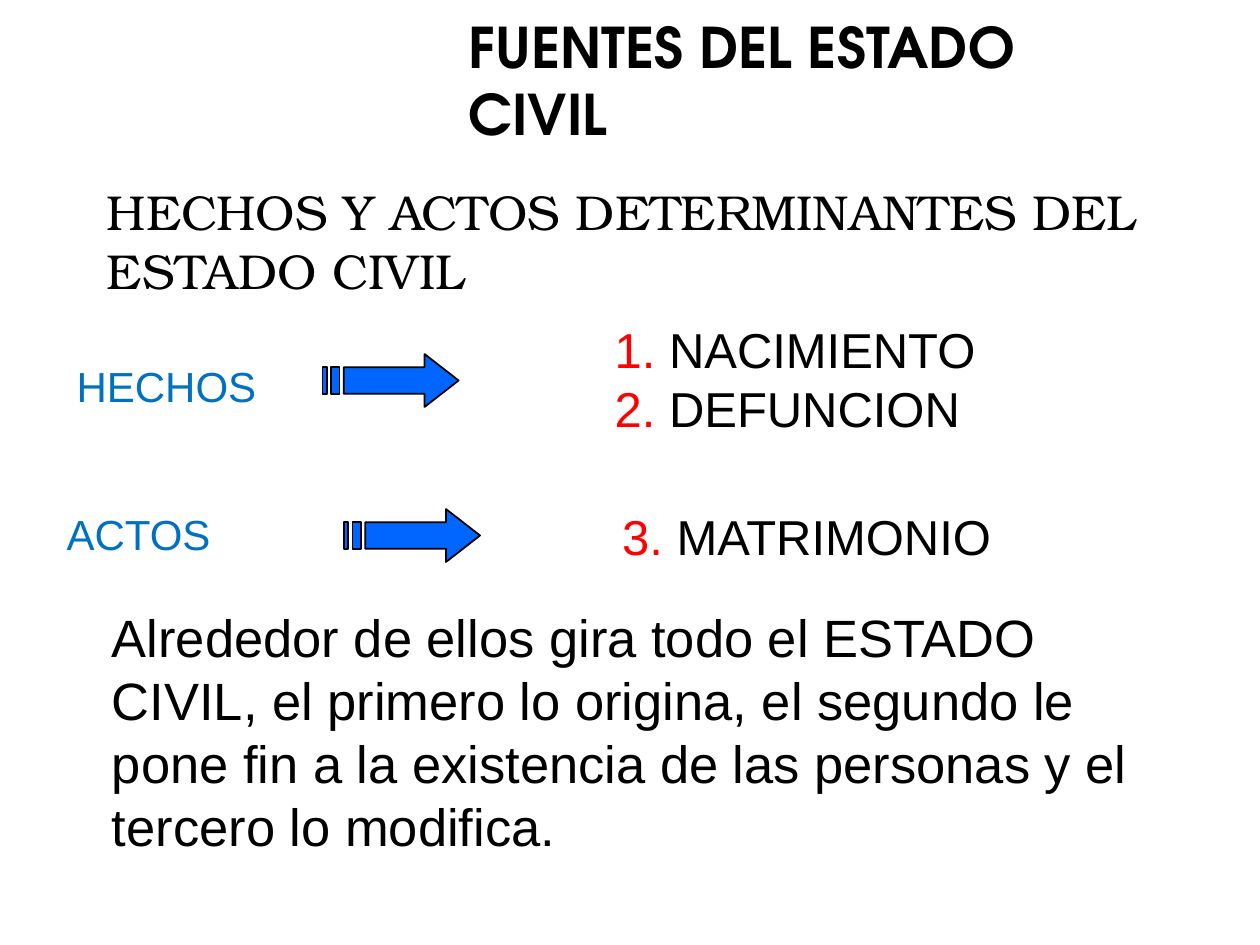
from pptx import Presentation
from pptx.dml.color import RGBColor
from pptx.enum.text import MSO_AUTO_SIZE
from pptx.util import Inches, Pt

BLACK = RGBColor(0, 0, 0)
RED = RGBColor(0xFF, 0, 0)
BLUE = RGBColor(0, 0x70, 0xC0)
FILL = RGBColor(0, 0x66, 0xFF)
GROW = MSO_AUTO_SIZE.SHAPE_TO_FIT_TEXT


def add_text(slide, box, lines, size, font="Arial", color=BLACK, bold=False, wrap=True):
    """Each line is a list of runs: plain strings or (text, color) pairs."""
    frame = slide.shapes.add_textbox(*map(Inches, box)).text_frame
    frame.word_wrap = wrap
    frame.auto_size = GROW
    for i, line in enumerate(lines):
        para = frame.paragraphs[0] if i == 0 else frame.add_paragraph()
        for part in line:
            text, tint = (part, color) if isinstance(part, str) else part
            run = para.add_run()
            run.text = text
            run.font.name = font
            run.font.size = Pt(size)
            run.font.bold = bold
            run.font.color.rgb = tint


def add_arrow(slide, left, top, width=1.08, height=0.42):
    """Right arrow with two stripes at its tail."""
    unit = width / 32
    neck = 24 * unit
    high, low = height / 4, height * 3 / 4

    def bar(start, end):
        return [(start, high), (end, high), (end, low), (start, low)]

    head = [(neck, 0), (neck, high), (5 * unit, high), (5 * unit, low),
            (neck, low), (neck, height), (width, height / 2)]
    parts = [head, bar(2 * unit, 4 * unit), bar(0, unit)]
    paths = [[(Inches(left + x), Inches(top + y)) for x, y in part] for part in parts]

    pen = slide.shapes.build_freeform(*paths[0][0])
    for i, points in enumerate(paths):
        if i:
            pen.move_to(*points[0])
        pen.add_line_segments(points[1:], close=True)
    arrow = pen.convert_to_shape()
    arrow.shadow.inherit = False
    arrow.fill.solid()
    arrow.fill.fore_color.rgb = FILL
    arrow.line.color.rgb = BLACK
    arrow.line.width = Pt(1)


def add_items(slide, box, items, first):
    lines = [[(f"{n}.", RED), f" {item}"] for n, item in enumerate(items, first)]
    add_text(slide, box, lines, 28)


def main():
    deck = Presentation()
    deck.slide_width, deck.slide_height = Inches(10), Inches(7.5)
    slide = deck.slides.add_slide(deck.slide_layouts[6])

    add_text(slide, (3.62, 0.05, 5, 1.18), [["FUENTES DEL ESTADO CIVIL"]], 32,
             font="TeX Gyre Adventor", bold=True)
    add_text(slide, (0.75, 1.39, 8.66, 1.04),
             [["HECHOS Y ACTOS DETERMINANTES DEL ESTADO CIVIL"]], 28,
             font="TeX Gyre Bonum")

    add_text(slide, (0.51, 2.81, 1.64, 0.51), [["HECHOS"]], 24, color=BLUE, wrap=False)
    add_arrow(slide, 2.56, 2.81)
    add_text(slide, (0.43, 3.99, 1.35, 0.51), [["ACTOS"]], 24, color=BLUE, wrap=False)
    add_arrow(slide, 2.73, 4.04)

    add_items(slide, (4.78, 2.49, 3.13, 1.04), ["NACIMIENTO", "DEFUNCION"], 1)
    add_items(slide, (4.84, 3.97, 3.47, 0.57), ["MATRIMONIO"], 3)

    add_text(slide, (0.79, 4.75, 8.46, 2.12),
             [["Alrededor de ellos gira todo el ESTADO CIVIL, el primero lo origina, "
               "el segundo le pone fin a la existencia de las personas y el tercero "
               "lo modifica."]], 30)

    deck.save("out.pptx")


if __name__ == "__main__":
    main()
